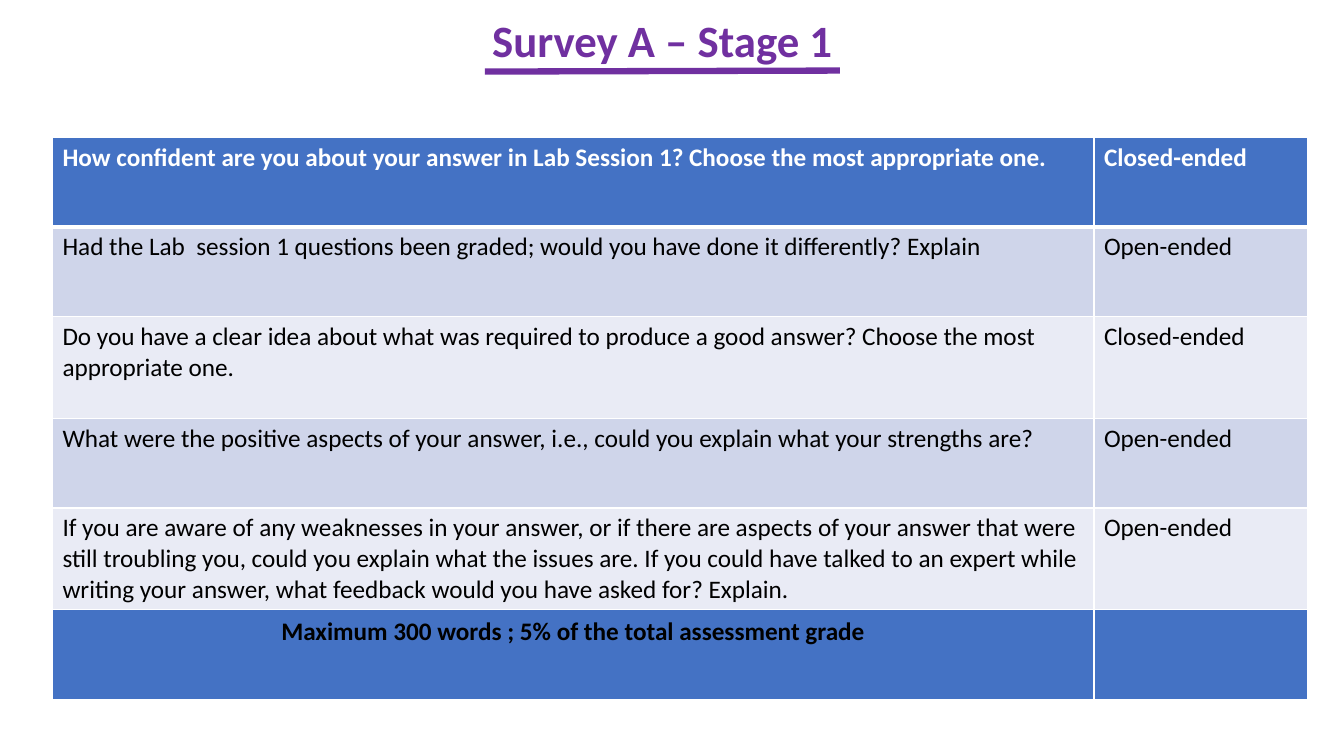
"""Build the Survey A – Stage 1 slide with its table of questions."""
import pptx
import pptx.dml.color
import pptx.enum.shapes
import pptx.enum.text
import pptx.oxml.ns
import pptx.util
from lxml import etree

RGBColor = pptx.dml.color.RGBColor
Inches = pptx.util.Inches
Pt = pptx.util.Pt
PP_ALIGN = pptx.enum.text.PP_ALIGN
qn = pptx.oxml.ns.qn

PURPLE = RGBColor(0x70, 0x30, 0xA0)
BLUE = RGBColor(0x44, 0x72, 0xC4)
BAND_DARK = RGBColor(0xCF, 0xD5, 0xEA)
BAND_LIGHT = RGBColor(0xE9, 0xEB, 0xF5)
WHITE = RGBColor(0xFF, 0xFF, 0xFF)
BLACK = RGBColor(0, 0, 0)

TABLE_LEFT, TABLE_TOP = 0.52, 1.36
COLUMNS = (10.33, 2.12)
ROW_HEIGHT, TALL_ROW_HEIGHT = 0.89, 1.01
TALL_ROWS = (2, 4)

ROWS = (
    ("How confident are you about your answer in Lab Session 1? "
     "Choose the most appropriate one.", "Closed-ended"),
    ("Had the Lab  session 1 questions been graded; would you have done it "
     "differently? Explain", "Open-ended"),
    ("Do you have a clear idea about what was required to produce a good answer? "
     "Choose the most appropriate one.", "Closed-ended"),
    ("What were the positive aspects of your answer, i.e., could you explain "
     "what your strengths are?", "Open-ended"),
    ("If you are aware of any weaknesses in your answer, or if there are aspects "
     "of your answer that were still troubling you, could you explain what the "
     "issues are. If you could have talked to an expert while writing your answer, "
     "what feedback would you have asked for? Explain.", "Open-ended"),
    ("Maximum 300 words ; 5% of the total assessment grade", ""),
)

TITLE_FONT = {"name": "Calibri", "size": Pt(32), "bold": True}
BODY_FONT = {"name": "Calibri", "size": Pt(18), "bold": False}
BOLD_FONT = {**BODY_FONT, "bold": True}
FOOTER_PARAGRAPH = {"alignment": PP_ALIGN.CENTER, "line_spacing": 1.07,
                    "space_after": Pt(8)}


def set_attributes(target, values):
    """Set each named attribute of the target."""
    for name, value in values.items():
        setattr(target, name, value)


def write_text(p, text, font, color, layout):
    """Fill a paragraph with one formatted run."""
    set_attributes(p, layout)
    if not text:
        set_attributes(p.font, font)
        return
    r = p.add_run()
    r.text = text
    set_attributes(r.font, font)
    r.font.color.rgb = color


def add_title(s, text):
    """Add the centred title."""
    sp = s.shapes.add_textbox(*map(Inches, (4.26, 0.09, 4.62, 0.6)))
    tf = sp.text_frame
    set_attributes(tf, {"word_wrap": True,
                        "vertical_anchor": pptx.enum.text.MSO_ANCHOR.MIDDLE})
    write_text(tf.paragraphs[0], text, TITLE_FONT, PURPLE,
               {"alignment": PP_ALIGN.CENTER})


def add_underline(s):
    """Add the thick line under the title."""
    line = s.shapes.add_connector(pptx.enum.shapes.MSO_CONNECTOR.STRAIGHT,
                                  *map(Inches, (4.81, 0.71, 8.33, 0.7)))
    line.line.color.rgb = PURPLE
    line.line.width = Pt(4.5)
    etree.SubElement(line._element.spPr, qn("a:effectLst"))


def set_borders(cell, widths):
    """Draw white cell borders, with widths in points by side."""
    tc_pr = cell._tc.get_or_add_tcPr()
    for i, (side, width) in enumerate(widths.items()):
        ln = etree.Element(qn(f"a:ln{side}"), w=str(Pt(width)))
        fill = etree.SubElement(ln, qn("a:solidFill"))
        etree.SubElement(fill, qn("a:srgbClr"), val=str(WHITE))
        tc_pr.insert(i, ln)


def row_style(index):
    """Return fill, font, text colour, paragraph layout and borders of a row."""
    borders = {"L": 1, "R": 1, "T": 3 if index == 1 else 1,
               "B": 3 if index == 0 else 1}
    if index == 0:
        return BLUE, BOLD_FONT, WHITE, {}, borders
    if index == len(ROWS) - 1:
        return BLUE, BOLD_FONT, BLACK, FOOTER_PARAGRAPH, borders
    return BAND_DARK if index % 2 else BAND_LIGHT, BODY_FONT, BLACK, {}, borders


def add_question_table(s):
    """Add the table of questions and their types."""
    heights = [TALL_ROW_HEIGHT if i in TALL_ROWS else ROW_HEIGHT
               for i in range(len(ROWS))]
    size = (TABLE_LEFT, TABLE_TOP, sum(COLUMNS), sum(heights))
    table = s.shapes.add_table(len(ROWS), len(COLUMNS), *map(Inches, size)).table
    for column, width in zip(table.columns, COLUMNS):
        column.width = Inches(width)
    for i, texts in enumerate(ROWS):
        table.rows[i].height = Inches(heights[i])
        fill, font, color, layout, borders = row_style(i)
        for j, text in enumerate(texts):
            cell = table.cell(i, j)
            cell.fill.solid()
            cell.fill.fore_color.rgb = fill
            set_borders(cell, borders)
            write_text(cell.text_frame.paragraphs[0], text, font, color, layout)


def main():
    """Build and save the slide."""
    prs = pptx.Presentation()
    set_attributes(prs, {"slide_width": Inches(13.33), "slide_height": Inches(7.5)})
    s = prs.slides.add_slide(prs.slide_layouts[6])
    add_underline(s)
    add_title(s, "Survey A – Stage 1")
    add_question_table(s)
    prs.save("out.pptx")


if __name__ == "__main__":
    main()
